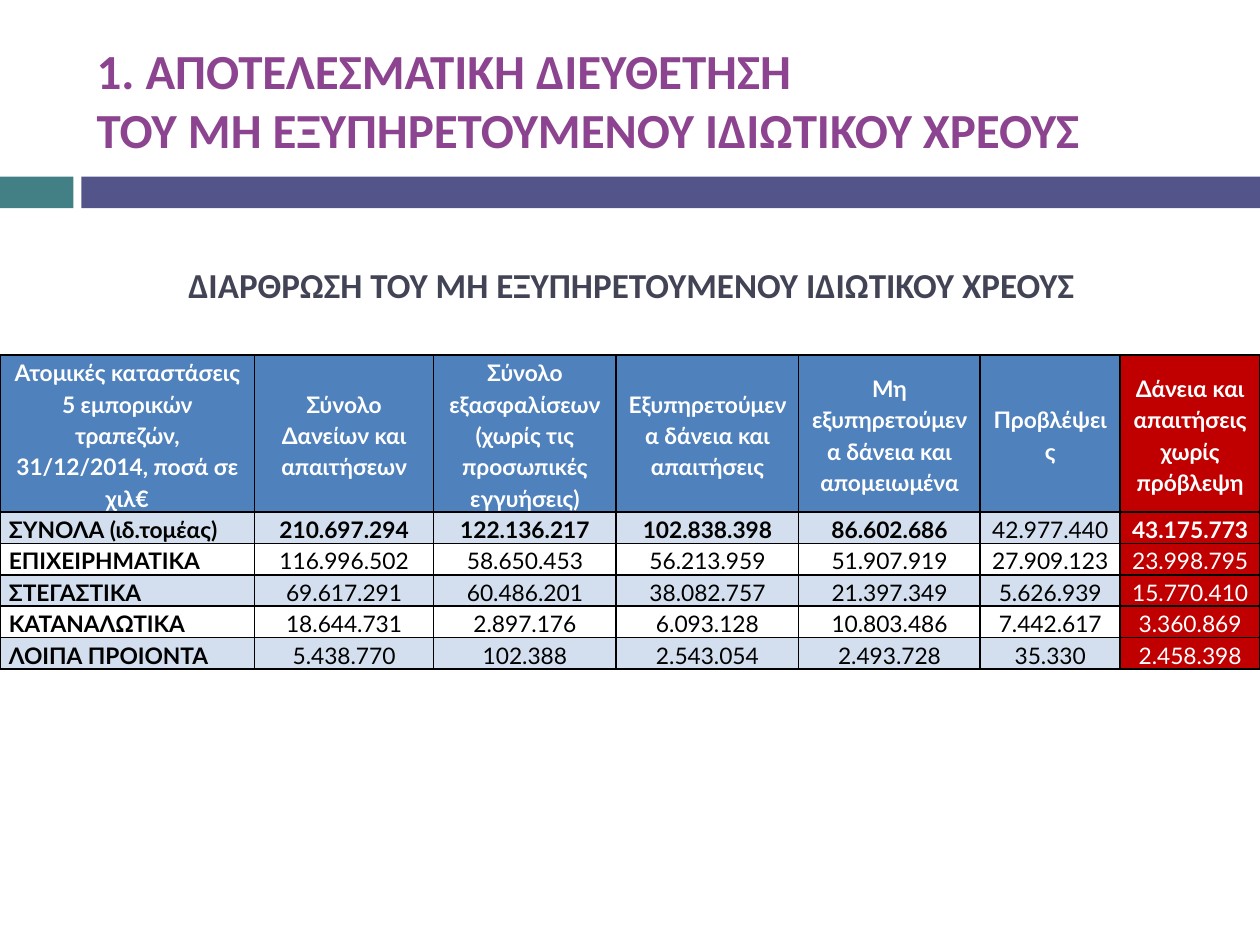
from lxml.etree import SubElement
from pptx import Presentation
from pptx.dml.color import RGBColor
from pptx.enum.shapes import MSO_SHAPE
from pptx.enum.text import MSO_ANCHOR, MSO_AUTO_SIZE, PP_ALIGN
from pptx.oxml.ns import qn
from pptx.util import Cm, Pt

# Content
HEADING = ["1. ΑΠΟΤΕΛΕΣΜΑΤΙΚΗ ΔΙΕΥΘΕΤΗΣΗ", "ΤΟΥ ΜΗ ΕΞΥΠΗΡΕΤΟΥΜΕΝΟΥ ΙΔΙΩΤΙΚΟΥ ΧΡΕΟΥΣ"]
TITLE = ["ΔΙΑΡΘΡΩΣΗ ΤΟΥ ΜΗ ΕΞΥΠΗΡΕΤΟΥΜΕΝΟΥ ΙΔΙΩΤΙΚΟΥ ΧΡΕΟΥΣ"]
ROWS = [
    ["Ατομικές καταστάσεις 5 εμπορικών τραπεζών, 31/12/2014, ποσά σε χιλ€",
     "Σύνολο Δανείων και απαιτήσεων",
     "Σύνολο εξασφαλίσεων (χωρίς τις προσωπικές εγγυήσεις)",
     "Εξυπηρετούμενα δάνεια και απαιτήσεις",
     "Μη εξυπηρετούμενα δάνεια και απομειωμένα",
     "Προβλέψεις",
     "Δάνεια και απαιτήσεις χωρίς πρόβλεψη"],
    ["ΣΥΝΟΛΑ (ιδ.τομέας)", "210.697.294", "122.136.217", "102.838.398",
     "86.602.686", "42.977.440", "43.175.773"],
    ["ΕΠΙΧΕΙΡΗΜΑΤΙΚΑ", "116.996.502", "58.650.453", "56.213.959",
     "51.907.919", "27.909.123", "23.998.795"],
    ["ΣΤΕΓΑΣΤΙΚΑ", "69.617.291", "60.486.201", "38.082.757",
     "21.397.349", "5.626.939", "15.770.410"],
    ["ΚΑΤΑΝΑΛΩΤΙΚΑ", "18.644.731", "2.897.176", "6.093.128",
     "10.803.486", "7.442.617", "3.360.869"],
    ["ΛΟΙΠΑ ΠΡΟΙΟΝΤΑ", "5.438.770", "102.388", "2.543.054",
     "2.493.728", "35.330", "2.458.398"],
]
COLUMN_WIDTHS = [5.13, 3.61, 3.68, 3.68, 3.66, 2.82, 2.82]
ROW_HEIGHTS = [3.16] + [0.63] * (len(ROWS) - 1)
PROVISIONS, UNCOVERED = 5, 6  # the last two columns

COLORS = {
    "teal": "438086", "indigo": "53548A", "slate": "424456", "purple": "8D4490",
    "header": "4F81BD", "band": "D3DFEE", "alert": "C00000",
    "white": "FFFFFF", "black": "000000",
}
BARS = [("teal", 0, 1.48), ("indigo", 1.64, 23.76)]
FONTS = {
    "heading": {"name": "Calibri", "size": Pt(28), "bold": True},
    "title": {"name": "Calibri", "size": Pt(20), "bold": True},
    "cell": {"name": "Lato", "size": Pt(13)},
}
CELL_FORMAT = {"margin_left": Cm(0.18), "margin_right": Cm(0.18),
               "margin_top": 0, "margin_bottom": 0}


def color(name):
    return RGBColor.from_string(COLORS[name])


def apply(target, values):
    for name, value in values.items():
        setattr(target, name, value)


def write(shape, lines, font, color_name, alignment):
    frame = shape.text_frame
    apply(frame, {"word_wrap": True, "auto_size": MSO_AUTO_SIZE.NONE,
                  "vertical_anchor": MSO_ANCHOR.MIDDLE})
    paragraph = frame.paragraphs[0]
    paragraph.text = "\n".join(lines)
    apply(paragraph, {"alignment": alignment, "line_spacing": 1.0})
    for run in paragraph.runs:
        apply(run.font, FONTS[font])
        run.font.color.rgb = color(color_name)


def add_borders(cell):
    properties = cell._tc.get_or_add_tcPr()
    for side in ("a:lnL", "a:lnR", "a:lnT", "a:lnB"):
        line = SubElement(properties, qn(side), w=str(Pt(1)))
        fill = SubElement(line, qn("a:solidFill"))
        SubElement(fill, qn("a:srgbClr"), val=COLORS["black"])


def format_cell(cell, text, row, column):
    header, alert = row == 0, column == UNCOVERED
    apply(cell, CELL_FORMAT)
    cell.vertical_anchor = MSO_ANCHOR.MIDDLE if header else MSO_ANCHOR.TOP
    add_borders(cell)
    fill_name = "alert" if alert else "header" if header else "band" if row % 2 else None
    if fill_name:
        cell.fill.solid()
        cell.fill.fore_color.rgb = color(fill_name)
    else:
        cell.fill.background()

    paragraph = cell.text_frame.paragraphs[0]
    paragraph.text = text
    label = column == 0 and not header
    apply(paragraph, {"alignment": PP_ALIGN.JUSTIFY if label else PP_ALIGN.CENTER,
                      "line_spacing": 1.15})
    font = paragraph.runs[0].font
    apply(font, FONTS["cell"])
    font.bold = header or column == 0 or (row == 1 and column != PROVISIONS)
    font.color.rgb = color("white" if header or alert else "black")


def main():
    presentation = Presentation()
    apply(presentation, {"slide_width": Cm(25.4), "slide_height": Cm(19.05)})
    slide = presentation.slides.add_slide(presentation.slide_layouts[5])

    # Divider bars
    for name, left, width in BARS:
        bar = slide.shapes.add_shape(MSO_SHAPE.RECTANGLE, Cm(left), Cm(3.56), Cm(width), Cm(0.64))
        bar.shadow.inherit = False
        bar.fill.solid()
        bar.fill.fore_color.rgb = color(name)
        bar.line.fill.background()

    # Table title
    title = slide.shapes.title
    apply(title, {"left": Cm(1.4), "top": Cm(4.37), "width": Cm(22.66), "height": Cm(2.74)})
    write(title, TITLE, "title", "slate", PP_ALIGN.CENTER)

    # Debt table
    table = slide.shapes.add_table(len(ROWS), len(COLUMN_WIDTHS), 0, Cm(7.16),
                                   Cm(sum(COLUMN_WIDTHS)), Cm(sum(ROW_HEIGHTS))).table
    for column, width in zip(table.columns, COLUMN_WIDTHS):
        column.width = Cm(width)
    for row, height in zip(table.rows, ROW_HEIGHTS):
        row.height = Cm(height)
    for row, texts in enumerate(ROWS):
        for column, text in enumerate(texts):
            format_cell(table.cell(row, column), text, row, column)

    # Section heading
    heading = slide.shapes.add_textbox(Cm(1.7), Cm(0.64), Cm(22.66), Cm(2.74))
    write(heading, HEADING, "heading", "purple", PP_ALIGN.LEFT)

    presentation.save("out.pptx")


if __name__ == "__main__":
    main()
